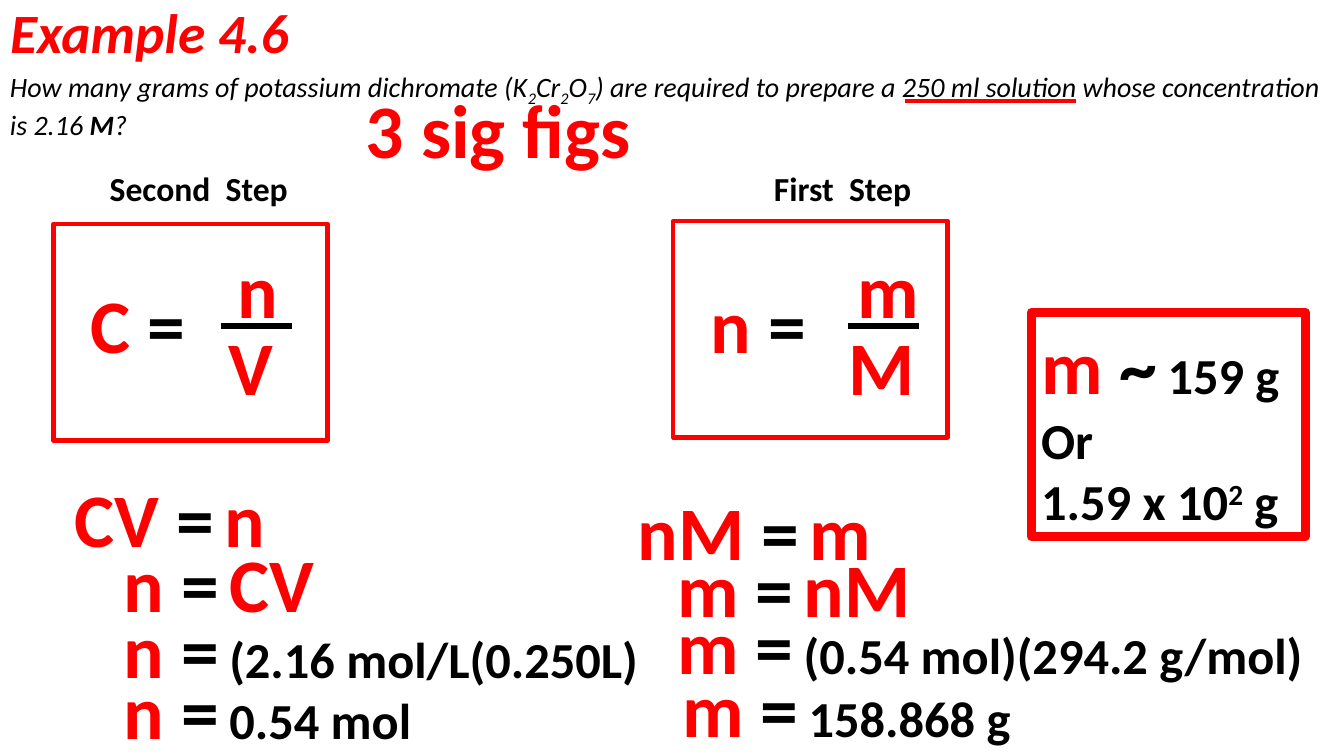
from dataclasses import dataclass
from typing import Optional

from lxml import etree
from pptx import Presentation
from pptx.dml.color import RGBColor
from pptx.enum.shapes import MSO_CONNECTOR, MSO_SHAPE
from pptx.enum.text import MSO_ANCHOR, MSO_AUTO_SIZE, PP_ALIGN
from pptx.oxml.ns import qn
from pptx.util import Inches, Pt

RED = RGBColor(0xFF, 0x00, 0x00)
BLACK = RGBColor(0x00, 0x00, 0x00)
FONT = "Calibri"
LEFT = PP_ALIGN.LEFT
MIDDLE = MSO_ANCHOR.MIDDLE
FIT_SHAPE = MSO_AUTO_SIZE.SHAPE_TO_FIT_TEXT
FIXED = MSO_AUTO_SIZE.NONE
RECTANGLE = MSO_SHAPE.RECTANGLE
STRAIGHT = MSO_CONNECTOR.STRAIGHT

SLIDE_WIDTH = Inches(13.33)
SLIDE_HEIGHT = Inches(7.5)
COLUMN = SLIDE_WIDTH / 40
ROW = SLIDE_HEIGHT / 22.5

SYMBOL_SIZE = 54
VALUE_SIZE = 36
SYMBOL_ROWS = 3.03
TITLE_ONLY_LAYOUT = 5


@dataclass(frozen=True)
class Span:
    text: str
    size: Optional[float] = None
    color: Optional[RGBColor] = None
    bold: Optional[bool] = None
    baseline: int = 0


@dataclass(frozen=True)
class Line:
    spans: tuple[Span, ...]
    size: float = SYMBOL_SIZE
    color: RGBColor = RED
    bold: bool = True
    italic: bool = False


@dataclass(frozen=True)
class Area:
    left: float
    top: float
    width: float
    height: float = SYMBOL_ROWS

    def emu(self) -> tuple[int, int, int, int]:
        return (round(self.left * COLUMN), round(self.top * ROW),
                round(self.width * COLUMN), round(self.height * ROW))


@dataclass(frozen=True)
class Equation:
    area: Area
    subject: str
    result: str
    numeric: bool = False


@dataclass(frozen=True)
class Step:
    heading: str
    heading_left: float
    heading_width: float
    frame_left: float
    frame_top: float
    bar_left: float
    subject: str
    numerator: str
    denominator: str
    equations: tuple[Equation, ...]


EQUALS = (Span("=", color=BLACK), Span(" ", size=32, bold=False))

STEPS = (
    Step("Second  Step", 2.97, 5.97, 1.59, 6.66, 6.57, "C", "n", "V", (
        Equation(Area(1.92, 13.89, 6.78), "CV", "n"),
        Equation(Area(3.39, 15.84, 6.78), "n", "CV"),
        Equation(Area(3.39, 17.79, 16.23), "n", "(2.16 mol/L(0.250L)", True),
        Equation(Area(3.39, 19.62, 9.63), "n", "0.54 mol", True),
    )),
    Step("First  Step", 22.74, 5.1, 20.04, 6.57, 25.23, "n", "m", "M", (
        Equation(Area(18.69, 14.28, 8.31), "nM", "m"),
        Equation(Area(19.86, 15.99, 8.31), "m", "nM"),
        Equation(Area(19.86, 17.67, 19.53), "m", "(0.54 mol)(294.2 g/mol)", True),
        Equation(Area(20.01, 19.56, 10.71), "m", "158.868 g", True),
    )),
)

QUESTION = Line((
    Span("How many grams of potassium dichromate (K"), Span("2", baseline=-25000),
    Span("Cr"), Span("2", baseline=-25000),
    Span("O"), Span("7", baseline=-25000),
    Span(") are required to prepare a 250 ml solution whose concentration is 2.16 "),
    Span("M", bold=True), Span("?"),
), size=20, color=BLACK, bold=False, italic=True)

ANSWER = (
    Line((Span("m ", size=SYMBOL_SIZE, color=RED), Span("~", size=SYMBOL_SIZE),
          Span(" ", size=32, bold=False), Span("159 g")), VALUE_SIZE, BLACK),
    Line((Span("Or"),), VALUE_SIZE, BLACK),
    Line((Span("1.59 x 10"), Span("2", baseline=30000), Span(" g")), VALUE_SIZE, BLACK),
)


def write_lines(frame, lines: tuple[Line, ...]) -> None:
    for index, line in enumerate(lines):
        paragraph = frame.add_paragraph() if index else frame.paragraphs[0]
        paragraph.alignment = LEFT
        font = paragraph.font
        font.name, font.size = FONT, Pt(line.size)
        font.bold, font.italic = line.bold, line.italic
        font.color.rgb = line.color
        for span in line.spans:
            run = paragraph.add_run()
            run.text = span.text
            if span.size is not None:
                run.font.size = Pt(span.size)
            if span.color is not None:
                run.font.color.rgb = span.color
            if span.bold is not None:
                run.font.bold = span.bold
            if span.baseline:
                run._r.get_or_add_rPr().set("baseline", str(span.baseline))


def add_text(slide, area: Area, *lines: Line) -> None:
    frame = slide.shapes.add_textbox(*area.emu()).text_frame
    frame.word_wrap = True
    frame.auto_size = FIT_SHAPE
    write_lines(frame, lines)


def add_rule(slide, left: float, top: float, width: float,
             color: RGBColor, weight: float) -> None:
    x, y, length, _ = Area(left, top, width).emu()
    rule = slide.shapes.add_connector(STRAIGHT, x, y, x + length, y)
    rule.line.color.rgb = color
    rule.line.width = Pt(weight)
    etree.SubElement(rule._element.spPr, qn("a:effectLst"))


def add_frame(slide, area: Area, weight: float):
    box = slide.shapes.add_shape(RECTANGLE, *area.emu())
    box.shadow.inherit = False
    box.fill.background()
    box.line.color.rgb = RED
    box.line.width = Pt(weight)
    return box


def add_title(slide, text: str) -> None:
    title = slide.shapes.title
    title.left, title.top, title.width, title.height = Area(0, 0, 34.5, 2.13).emu()
    title.text_frame.vertical_anchor = MIDDLE
    title.text_frame.auto_size = FIXED
    write_lines(title.text_frame, (Line((Span(text),), size=39.6, italic=True),))
    title.text_frame.paragraphs[0].line_spacing = 0.9


def add_step(slide, step: Step) -> None:
    left = step.frame_left
    add_text(slide, Area(left + 0.81, 8.12, 3.54),
             Line((Span(f"{step.subject} "), *EQUALS)))
    add_rule(slide, step.bar_left, 9.71, 2.13, BLACK, 4)
    add_text(slide, Area(left + 4.92, 9.38, 2.43), Line((Span(step.denominator),)))
    add_text(slide, Area(left + 5.19, 7.07, 1.89), Line((Span(step.numerator),)))
    add_frame(slide, Area(left, step.frame_top, 8.16, 6.45), 3)
    add_text(slide, Area(step.heading_left, 4.85, step.heading_width, 1.5),
             Line((Span(step.heading),), size=24, color=BLACK))
    for equation in step.equations:
        result = (Span(equation.result, VALUE_SIZE, BLACK) if equation.numeric
                  else Span(equation.result))
        add_text(slide, equation.area,
                 Line((Span(f"{equation.subject} "), *EQUALS, result)))


def main() -> None:
    deck = Presentation()
    deck.slide_width, deck.slide_height = SLIDE_WIDTH, SLIDE_HEIGHT
    slide = deck.slides.add_slide(deck.slide_layouts[TITLE_ONLY_LAYOUT])
    add_title(slide, "Example 4.6")
    add_text(slide, Area(0, 1.92, 40, 2.31), QUESTION)
    add_rule(slide, 26.94, 3, 5.07, RED, 3)
    for step in STEPS:
        add_step(slide, step)
    add_text(slide, Area(10.59, 2.31, 10.71), Line((Span("3 sig figs"),)))
    answer = add_frame(slide, Area(30.69, 9.3, 8.16, 6.66), 6.25).text_frame
    answer.word_wrap = True
    answer.auto_size = FIT_SHAPE
    write_lines(answer, ANSWER)
    deck.save("out.pptx")


if __name__ == "__main__":
    main()
